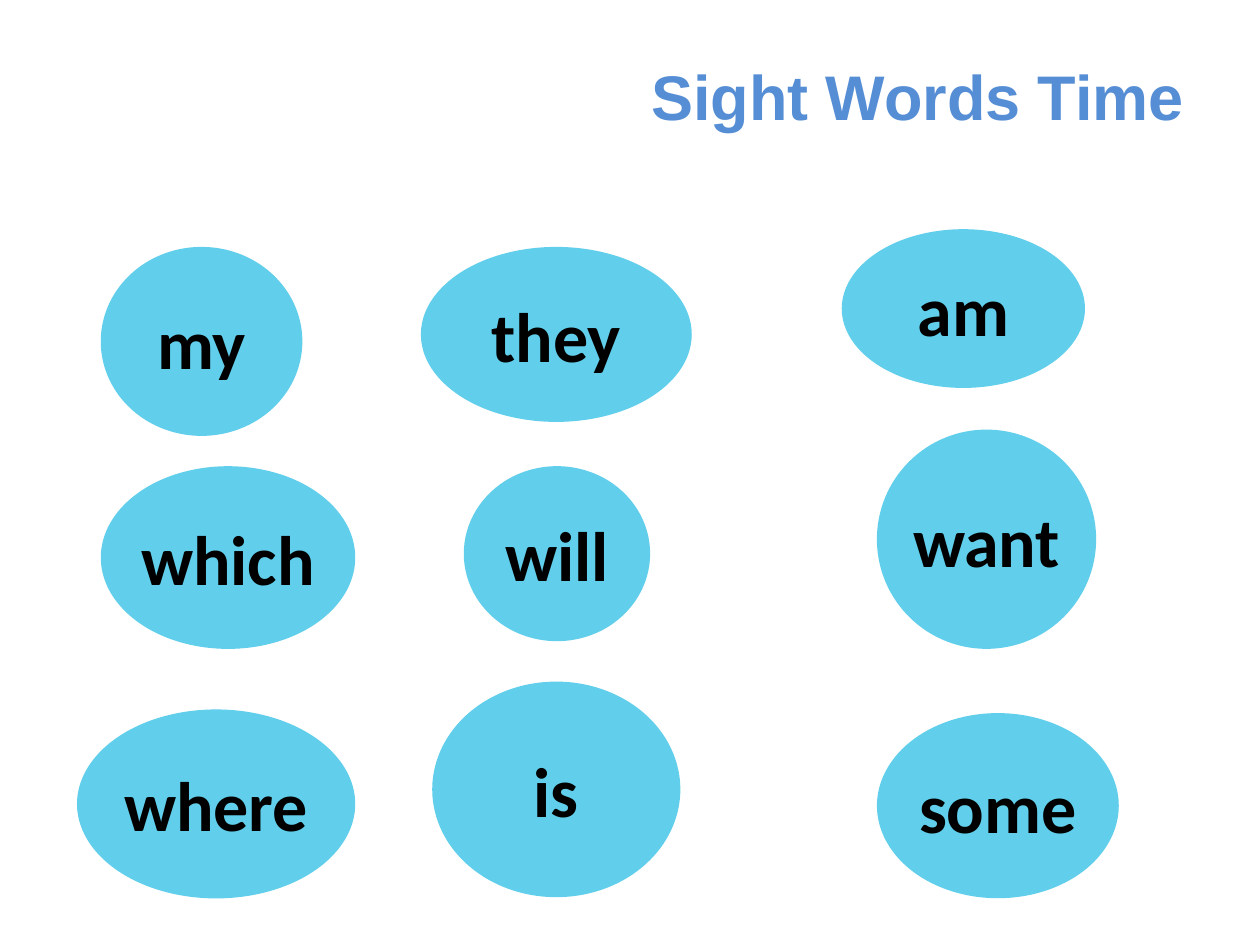
"""Build a slide of sight words in ovals under a title."""
from pptx import Presentation
from pptx.dml.color import RGBColor
from pptx.enum.shapes import MSO_SHAPE
from pptx.enum.text import MSO_ANCHOR, MSO_AUTO_SIZE, PP_ALIGN
from pptx.util import Pt

OVAL = MSO_SHAPE.OVAL
MIDDLE = MSO_ANCHOR.MIDDLE
CENTER = PP_ALIGN.CENTER
GROW = MSO_AUTO_SIZE.SHAPE_TO_FIT_TEXT

TITLE = " Sight Words Time"
TITLE_BOX = (324, 29.5, 391, 51)
TITLE_COLOR, OVAL_COLOR, WORD_COLOR = "558ED5", "61CFEB", "000000"
WORDS = [
    ("my", 57.6, 141.1, 115.2, 108),
    ("am", 481, 131, 139, 90.7),
    ("they", 240.5, 141.1, 154.8, 100),
    ("which", 57.6, 266.4, 145.4, 104.4),
    ("want", 501.1, 245.5, 125.3, 125.3),
    ("will", 265, 266.4, 106.5, 100),
    ("where", 44, 405.4, 159, 108),
    ("some", 501.1, 407.5, 138.2, 105.8),
    ("is", 247, 389.5, 141.8, 123.2),
]


def color(value):
    return RGBColor.from_string(value)


def write(frame, text, font_name, size, ink):
    paragraph = frame.paragraphs[0]
    paragraph.alignment = CENTER
    run = paragraph.add_run()
    run.text = text
    run.font.name = font_name
    run.font.size = Pt(size)
    run.font.bold = True
    run.font.color.rgb = color(ink)


def add_title(slide):
    title = slide.shapes.add_textbox(*map(Pt, TITLE_BOX))
    frame = title.text_frame
    frame.word_wrap = True
    frame.auto_size = GROW
    write(frame, TITLE, "Arial", 36, TITLE_COLOR)


def add_word(slide, word, *box):
    oval = slide.shapes.add_shape(OVAL, *map(Pt, box))
    oval.shadow.inherit = False
    oval.fill.solid()
    oval.fill.fore_color.rgb = color(OVAL_COLOR)
    oval.line.fill.background()
    frame = oval.text_frame
    frame.vertical_anchor = MIDDLE
    frame.margin_left = frame.margin_right = 0
    frame.margin_top = frame.margin_bottom = 0
    write(frame, word, "Calibri", 40, WORD_COLOR)


def main():
    deck = Presentation()
    deck.slide_width, deck.slide_height = Pt(720), Pt(540)
    slide = deck.slides.add_slide(deck.slide_layouts[6])
    add_title(slide)
    for word in WORDS:
        add_word(slide, *word)
    deck.save("out.pptx")


if __name__ == "__main__":
    main()
